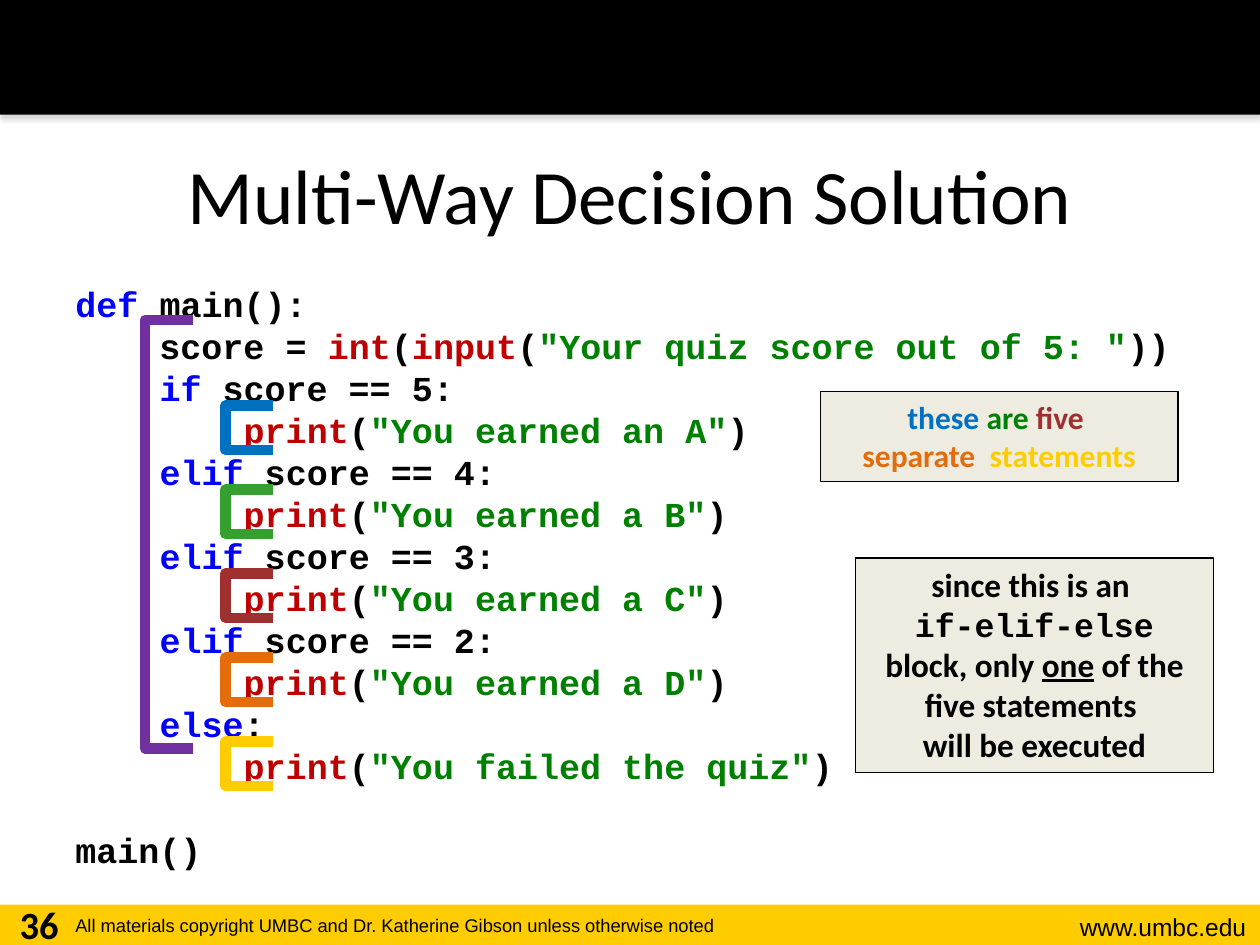
from lxml import etree
from pptx import Presentation
from pptx.dml.color import RGBColor
from pptx.enum.shapes import MSO_SHAPE
from pptx.enum.text import MSO_ANCHOR, PP_ALIGN
from pptx.oxml.ns import qn
from pptx.util import Inches, Pt

RECT, BRACKET = MSO_SHAPE.RECTANGLE, MSO_SHAPE.LEFT_BRACKET
LEFT, CENTER, RIGHT = PP_ALIGN.LEFT, PP_ALIGN.CENTER, PP_ALIGN.RIGHT
TOP, MIDDLE = MSO_ANCHOR.TOP, MSO_ANCHOR.MIDDLE

BLACK = RGBColor(0x00, 0x00, 0x00)
GRAY = RGBColor(0x80, 0x80, 0x80)
CREAM = RGBColor(0xEE, 0xEC, 0xE1)
GOLD = RGBColor(0xFF, 0xCC, 0x00)
PURPLE = RGBColor(0x70, 0x30, 0xA0)
BLUE = RGBColor(0x00, 0x70, 0xC0)
GREEN = RGBColor(0x35, 0xA0, 0x30)
MAROON = RGBColor(0xA0, 0x30, 0x30)
ORANGE = RGBColor(0xE4, 0x6C, 0x0A)
KEYWORD = RGBColor(0x00, 0x00, 0xFF)
CALL = RGBColor(0xC0, 0x00, 0x00)
STRING = RGBColor(0x00, 0x80, 0x00)

SANS, BODY, MONO = "Arial", "Calibri", "Courier New"
PITCH = 24
STEP = 2 * PITCH / 72

BRANCHES = [
    ("if", " score == 5:", "You earned an A", BLUE),
    ("elif ", "score == 4:", "You earned a B", GREEN),
    ("elif ", "score == 3:", "You earned a C", MAROON),
    ("elif ", "score == 2:", "You earned a D", ORANGE),
    ("else", ":", "You failed the quiz", GOLD),
]


def put(para, runs, base):
    """Add runs of (text, changes) to a paragraph, with breaks at newlines."""
    for text, change in runs:
        style = {"color": BLACK, **base, **change}
        color = style.pop("color")
        for i, part in enumerate(text.split("\n")):
            if i:
                para.add_line_break()
            if part:
                run = para.add_run()
                run.text = part
                run.font.color.rgb = color
                for key, value in style.items():
                    setattr(run.font, key, value)


def frame(shape, align=LEFT, anchor=TOP):
    """Set up the text frame of a shape and return it."""
    text = shape.text_frame
    text.word_wrap = True
    text.vertical_anchor = anchor
    text.paragraphs[0].alignment = align
    return text


def label(slide, box, text, base, align=LEFT, anchor=TOP):
    """Place one line of text in a box."""
    shape = slide.shapes.add_textbox(*map(Inches, box))
    put(frame(shape, align, anchor).paragraphs[0], [(text, {})], base)


def block(slide, box, fill, edge=None):
    """Place a filled rectangle."""
    shape = slide.shapes.add_shape(RECT, *map(Inches, box))
    shape.shadow.inherit = False
    shape.fill.solid()
    shape.fill.fore_color.rgb = fill
    if edge is None:
        shape.line.fill.background()
    else:
        shape.line.color.rgb = edge
        shape.line.width = Pt(0.75)
    return shape


def shade(shape):
    """Add a soft shadow below a shape."""
    effects = shape._element.spPr.find(qn("a:effectLst"))
    outer = etree.SubElement(
        effects, qn("a:outerShdw"), blurRad=str(Pt(3.1)), dist=str(Pt(1.8)),
        dir="5400000", algn="t", rotWithShape="0")
    color = etree.SubElement(outer, qn("a:srgbClr"), val=str(GRAY))
    etree.SubElement(color, qn("a:alpha"), val="35000")


def header(slide, box):
    """Draw the dark band at the top."""
    shade(block(slide, box, BLACK))


def footer(slide, box):
    """Draw the gold band with page number, rights line and site."""
    x, y, w, h = box
    block(slide, box, GOLD)
    label(slide, (x + w - 2, y + 0.01, 1.99, 0.34), "www.umbc.edu",
          {"size": Pt(14), "name": SANS}, RIGHT)
    label(slide, (x + 0.5, y + 0.03, 6.56, 0.29),
          "All materials copyright UMBC and Dr. Katherine Gibson unless otherwise noted",
          {"size": Pt(10.5), "name": SANS})
    label(slide, (x, y - 0.08, 0.62, 0.4), "36",
          {"size": Pt(22), "name": BODY, "bold": True}, CENTER)


def lines():
    """Return the program as lines of (text, color) runs."""
    code = [
        [("def ", KEYWORD), ("main():", BLACK)],
        [("    score = ", BLACK), ("int", CALL), ("(", BLACK), ("input", CALL),
         ("(", BLACK), ('"Your quiz score out of 5: "', STRING), ("))", BLACK)],
    ]
    for word, test, reply, _ in BRANCHES:
        code.append([("    ", BLACK), (word, KEYWORD), (test, BLACK)])
        code.append([("        ", BLACK), ("print", CALL), ("(", BLACK),
                     (f'"{reply}"', STRING), (")", BLACK)])
    return code + [[("main()", BLACK)]]


def bracket(slide, box, color):
    """Draw a square bracket around a block of code."""
    shape = slide.shapes.add_shape(BRACKET, *map(Inches, box))
    shape.shadow.inherit = False
    shape.adjustments[0] = 0
    shape.fill.background()
    shape.line.color.rgb = color
    shape.line.width = Pt(6)


def listing(slide, box):
    """Place the code and the brackets that mark its blocks."""
    x, y, _, _ = box
    text = frame(slide.shapes.add_textbox(*map(Inches, box)))
    text.margin_top = Inches(0.09)
    base = {"size": Pt(20), "name": MONO, "bold": True}
    for i, line in enumerate(lines()):
        para = text.add_paragraph() if i else text.paragraphs[0]
        para.line_spacing = Pt(PITCH)
        put(para, [(part, {"color": color}) for part, color in line], base)
    para.space_before = Pt(PITCH)
    bracket(slide, (x + 0.65, y + 0.39, 0.38, 3.4), PURPLE)
    for i, (*_, color) in enumerate(BRANCHES):
        bracket(slide, (x + 1.29, y + 1.07 + i * STEP, 0.38, 0.35), color)


def note(slide, box, runs, size):
    """Place a boxed remark."""
    shape = block(slide, box, CREAM, BLACK)
    put(frame(shape, CENTER).paragraphs[0], runs,
        {"size": Pt(size), "name": BODY, "bold": True})


def main():
    """Build the slide and save it."""
    deck = Presentation()
    deck.slide_width, deck.slide_height = Inches(10), Inches(7.5)
    slide = deck.slides.add_slide(deck.slide_layouts[6])
    footer(slide, (0, 7.18, 10, 0.32))
    header(slide, (0, 0, 10, 0.91))
    label(slide, (0.5, 0.91, 9, 1.25), "Multi-Way Decision Solution",
          {"size": Pt(44), "name": BODY}, CENTER, MIDDLE)
    listing(slide, (0.5, 2.15, 9, 4.55))
    note(slide, (6.51, 3.11, 2.84, 0.71), [
        ("these ", {"color": BLUE}), ("are ", {"color": STRING}),
        ("five \n", {"color": MAROON}), ("separate  ", {"color": ORANGE}),
        ("statements", {"color": GOLD})], 18)
    note(slide, (6.79, 4.43, 2.84, 1.7), [
        ("since this is an \n", {}), ("if-elif-else ", {"name": MONO}),
        ("block, only ", {}), ("one", {"underline": True}),
        (" of the five statements \nwill be executed", {})], 19)
    deck.save("out.pptx")


if __name__ == "__main__":
    main()
